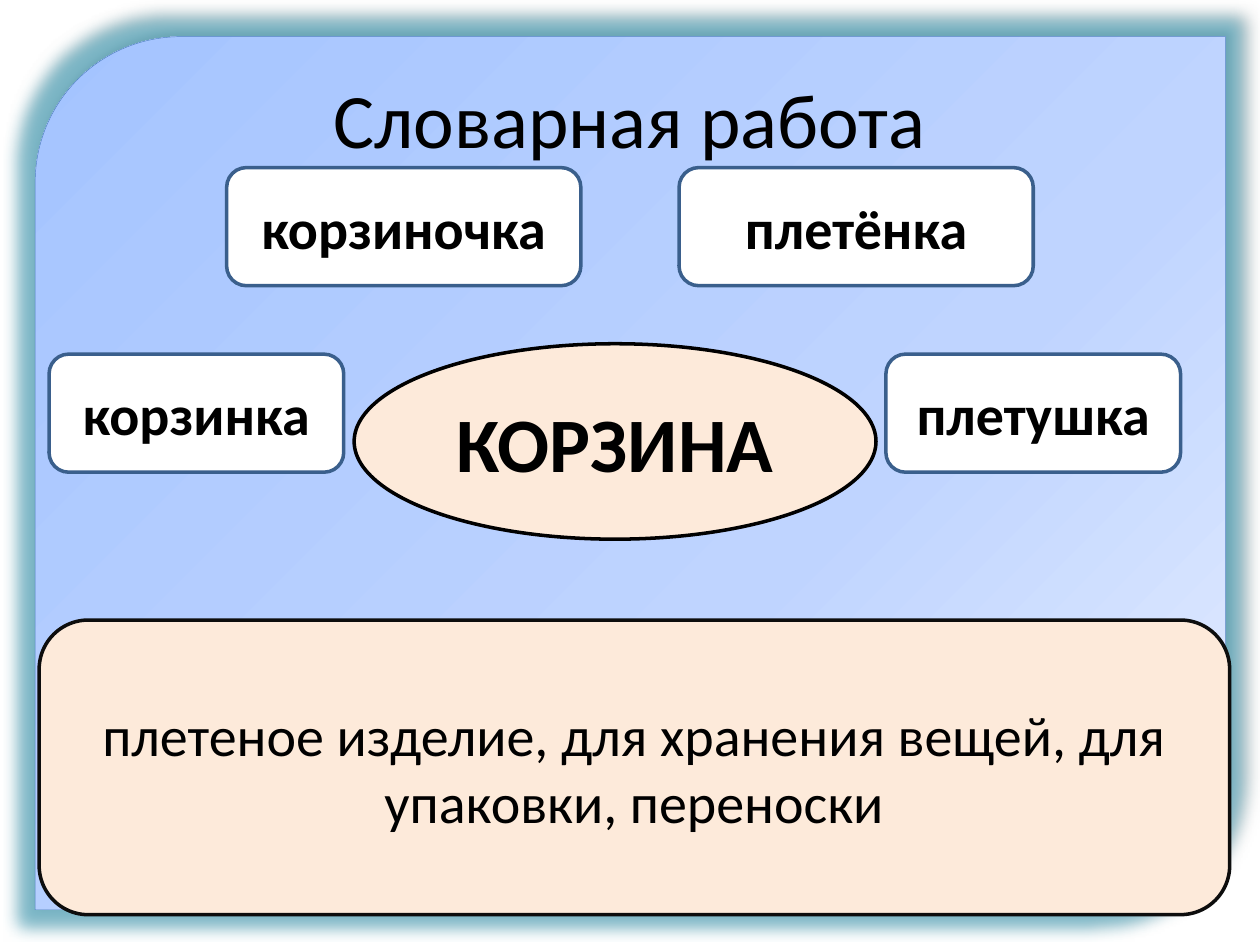
import pptx
import pptx.util
import pptx.dml.color
import pptx.enum.shapes
import pptx.enum.text
import pptx.oxml
import pptx.oxml.ns
from pptx.util import Cm

COLORS = {
    "black": "000000", "white": "FFFFFF", "peach": "FDEADA",
    "definition_line": "0D0D0D", "word_line": "3A5F8C",
    "panel_line": "4B7EBC", "glow": "4BACC6",
}
GRADIENT = [(0, "A4C4FF"), (62, "BFD4FF"), (100, "E6EEFF")]
FONT = "Calibri"
TITLE = "Словарная работа"
KEY_WORD = "КОРЗИНА"
DEFINITION = "плетеное изделие, для хранения вещей, для упаковки, переноски"
WORD_HEIGHT = 2.38
WORD_ROWS = [
    {"top": 7.14, "left": 0.99, "width": 5.94, "step": 16.87,
     "words": ["корзинка", "плетушка"]},
    {"top": 3.38, "left": 4.57, "width": 7.14, "step": 9.12,
     "words": ["корзиночка", "плетёнка"]},
]
SHAPES = pptx.enum.shapes.MSO_SHAPE
NAMESPACE = pptx.oxml.ns.nsdecls("a")


def rgb(name):
    return pptx.dml.color.RGBColor.from_string(COLORS[name])


def write_text(shape, text, size, bold=False):
    frame = shape.text_frame
    frame.word_wrap = True
    frame.vertical_anchor = pptx.enum.text.MSO_ANCHOR.MIDDLE
    paragraph = frame.paragraphs[0]
    paragraph.text = text
    paragraph.alignment = pptx.enum.text.PP_ALIGN.CENTER
    paragraph.font.name = FONT
    paragraph.font.size = pptx.util.Pt(size)
    paragraph.font.bold = bold
    paragraph.font.color.rgb = rgb("black")
    return paragraph


def add_box(slide, kind, box, fill, line, line_width=2):
    shape = slide.shapes.add_shape(kind, *map(Cm, box))
    shape.shadow.inherit = False
    shape.fill.solid()
    shape.fill.fore_color.rgb = rgb(fill)
    shape.line.color.rgb = rgb(line)
    shape.line.width = pptx.util.Pt(line_width)
    return shape


def add_panel(slide):
    panel = add_box(slide, SHAPES.ROUND_2_DIAG_RECTANGLE,
                    (0.71, 0.74, 24, 17.6), "white", "panel_line", 0.25)
    stops = "".join(
        f'<a:gs pos="{position * 1000}"><a:srgbClr val="{color}"/></a:gs>'
        for position, color in GRADIENT)
    gradient = pptx.oxml.parse_xml(
        f'<a:gradFill {NAMESPACE} rotWithShape="1"><a:gsLst>{stops}</a:gsLst>'
        '<a:path path="circle"><a:fillToRect r="100000" b="100000"/></a:path>'
        '</a:gradFill>')
    effects = pptx.oxml.parse_xml(
        f'<a:effectLst {NAMESPACE}><a:glow rad="228600">'
        f'<a:srgbClr val="{COLORS["glow"]}"><a:alpha val="60000"/></a:srgbClr>'
        '</a:glow><a:outerShdw blurRad="50800" dist="38100" dir="18900000">'
        f'<a:srgbClr val="{COLORS["black"]}"><a:alpha val="40000"/></a:srgbClr>'
        '</a:outerShdw></a:effectLst>')
    properties = panel.element.spPr
    for tag, replacement in (("a:solidFill", gradient), ("a:effectLst", effects)):
        old = properties.find(pptx.oxml.ns.qn(tag))
        properties.replace(old, replacement)
    slide.shapes.element.insert(2, panel.element)


def add_key_word(slide):
    ellipse = add_box(slide, SHAPES.OVAL, (7.14, 6.93, 10.52, 3.94),
                      "peach", "black")
    paragraph = write_text(ellipse, KEY_WORD, 44, True)
    outline = pptx.oxml.parse_xml(
        f'<a:ln {NAMESPACE} w="9525"><a:solidFill>'
        f'<a:srgbClr val="{COLORS["white"]}"/></a:solidFill></a:ln>')
    paragraph.runs[0].font._element.insert(0, outline)


def main():
    presentation = pptx.Presentation()
    presentation.slide_width = Cm(25.4)
    presentation.slide_height = Cm(19.05)
    slide = presentation.slides.add_slide(presentation.slide_layouts[5])

    add_panel(slide)
    title = slide.shapes.title
    title.left, title.top, title.width, title.height = map(
        Cm, (1.9, 0.79, 21.6, 3.18))
    write_text(title, TITLE, 44)

    add_key_word(slide)
    definition = add_box(slide, SHAPES.ROUNDED_RECTANGLE,
                         (0.79, 12.5, 24, 5.94), "peach", "definition_line")
    write_text(definition, DEFINITION, 32)

    for row in WORD_ROWS:
        for index, word in enumerate(row["words"]):
            left = row["left"] + index * row["step"]
            shape = add_box(slide, SHAPES.ROUNDED_RECTANGLE,
                            (left, row["top"], row["width"], WORD_HEIGHT),
                            "white", "word_line")
            write_text(shape, word, 32, True)

    presentation.save("out.pptx")


if __name__ == "__main__":
    main()
